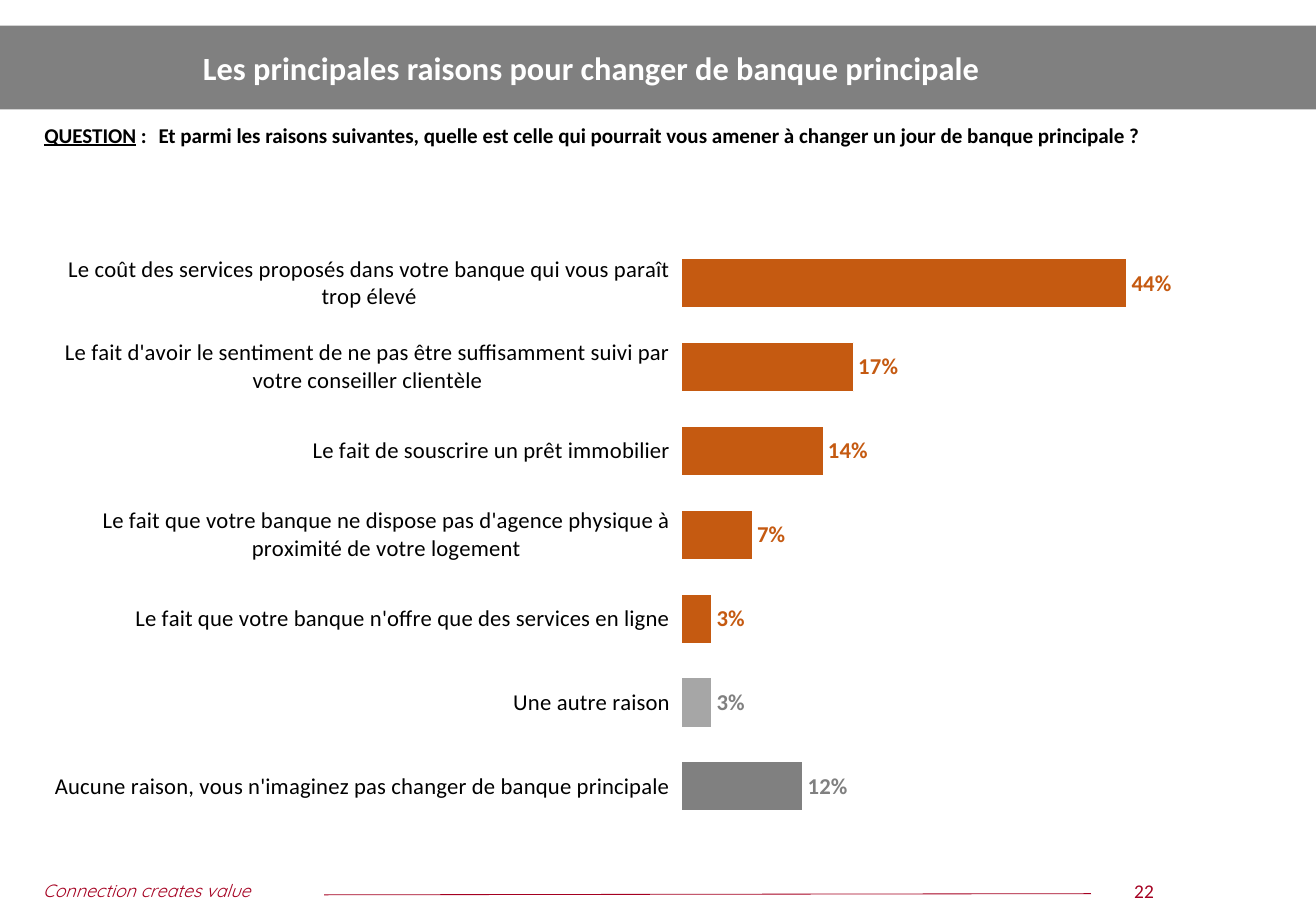
from pptx import Presentation
from pptx.chart.data import CategoryChartData
from pptx.dml.color import RGBColor
from pptx.enum.chart import XL_CHART_TYPE, XL_LABEL_POSITION, XL_TICK_LABEL_POSITION, XL_TICK_MARK
from pptx.enum.shapes import MSO_CONNECTOR, MSO_SHAPE
from pptx.enum.text import MSO_ANCHOR, PP_ALIGN
from pptx.oxml import parse_xml
from pptx.oxml.ns import nsdecls, qn
from pptx.util import Inches, Pt

COLORS = {
    "band": "808080",
    "white": "FFFFFF",
    "black": "000000",
    "accent": "A50021",
    "orange": "C55A11",
    "light_grey": "A6A6A6",
    "grey": "808080",
}

# Reason, share, bar colour, label colour
REASONS = [
    ("Le coût des services proposés dans votre banque qui vous paraît trop élevé", 0.44, "orange", "orange"),
    ("Le fait d'avoir le sentiment de ne pas être suffisamment suivi par votre conseiller clientèle",
     0.17, "orange", "orange"),
    ("Le fait de souscrire un prêt immobilier", 0.14, "orange", "orange"),
    ("Le fait que votre banque ne dispose pas d'agence physique à proximité de votre logement",
     0.07, "orange", "orange"),
    ("Le fait que votre banque n'offre que des services en ligne", 0.03, "orange", "orange"),
    ("Une autre raison", 0.03, "light_grey", "grey"),
    ("Aucune raison, vous n'imaginez pas changer de banque principale", 0.12, "grey", "grey"),
]


def color(name):
    return RGBColor.from_string(COLORS[name])


def set_font(font, size, color_name, name="Calibri", bold=False, italic=False):
    font.name = name
    font.size = Pt(size)
    font.bold = bold
    font.italic = italic
    font.color.rgb = color(color_name)


def add_text(slide, left, top, width, height):
    frame = slide.shapes.add_textbox(Inches(left), Inches(top), Inches(width), Inches(height)).text_frame
    frame.word_wrap = True
    return frame


def add_header(slide, left, top, width, height):
    # Grey band, placed behind the title
    band = slide.shapes.add_shape(
        MSO_SHAPE.RECTANGLE, Inches(left), Inches(top), Inches(width), Inches(height))
    band.shadow.inherit = False
    band.fill.solid()
    band.fill.fore_color.rgb = color("band")
    band.line.fill.background()
    title = slide.shapes.title
    title.element.addprevious(band.element)

    # Title
    title.left, title.top = Inches(left + 1.64), Inches(top)
    title.width, title.height = Inches(width - 1.81), Inches(height)
    frame = title.text_frame
    frame.text = "Les principales raisons pour changer de banque principale"
    frame.vertical_anchor = MSO_ANCHOR.MIDDLE
    paragraph = frame.paragraphs[0]
    paragraph.alignment = PP_ALIGN.JUSTIFY
    set_font(paragraph.font, 20, "white", bold=True)


def add_question(slide, left, top, width, height):
    frame = add_text(slide, left, top, width, height)
    frame.margin_left, frame.margin_right = Inches(0.09), Inches(0.36)
    frame.margin_top = frame.margin_bottom = Inches(0.12)
    paragraph = frame.paragraphs[0]
    paragraph.alignment = PP_ALIGN.JUSTIFY
    properties = paragraph._p.get_or_add_pPr()
    properties.set("marL", str(Inches(0.98)))
    properties.set("indent", str(-Inches(0.98)))
    set_font(paragraph.font, 13, "black", bold=True)
    keyword = paragraph.add_run()
    keyword.text = "QUESTION"
    keyword.font.underline = True
    question = paragraph.add_run()
    question.text = (" :\tEt parmi les raisons suivantes, quelle est celle qui pourrait "
                     "vous amener à changer un jour de banque principale ?")


def set_plot_layout(chart, x, y, width, height):
    plot_area = chart._chartSpace.chart.plotArea
    for layout in plot_area.findall(qn("c:layout")):
        plot_area.remove(layout)
    plot_area.insert(0, parse_xml(
        f'<c:layout {nsdecls("c")}><c:manualLayout><c:layoutTarget val="inner"/>'
        '<c:xMode val="edge"/><c:yMode val="edge"/>'
        f'<c:x val="{x}"/><c:y val="{y}"/><c:w val="{width}"/><c:h val="{height}"/>'
        '</c:manualLayout></c:layout>'))


def add_reasons_chart(slide, left, top, width, height):
    chart_data = CategoryChartData(number_format="0%")
    chart_data.categories = [reason[0] for reason in REASONS]
    chart_data.add_series("Series 1", [reason[1] for reason in REASONS])
    chart = slide.shapes.add_chart(
        XL_CHART_TYPE.BAR_CLUSTERED, Inches(left), Inches(top),
        Inches(width), Inches(height), chart_data).chart
    chart.has_legend = False
    chart.has_title = False
    set_font(chart.font, 18, "black")
    set_plot_layout(chart, 0.52, 0, 0.42, 1)

    # Axes
    categories = chart.category_axis
    categories.reverse_order = True
    categories.major_tick_mark = XL_TICK_MARK.OUTSIDE
    categories.tick_label_position = XL_TICK_LABEL_POSITION.LOW
    categories.format.line.fill.background()
    set_font(categories.tick_labels.font, 14, "black")
    values = chart.value_axis
    values.minimum_scale, values.maximum_scale = 0, 0.5
    values.has_major_gridlines = False
    values.visible = False

    # Bars and their labels
    plot = chart.plots[0]
    plot.gap_width = 70
    plot.vary_by_categories = False
    series = plot.series[0]
    series.format.fill.solid()
    series.format.fill.fore_color.rgb = color("orange")
    for index, (_, _, bar_color, label_color) in enumerate(REASONS):
        point = series.points[index]
        point.format.fill.solid()
        point.format.fill.fore_color.rgb = color(bar_color)
        point.format.line.color.rgb = color("white")
        point.format.line.width = Pt(0.75)
        set_font(point.data_label.font, 14, label_color, bold=True)
        point.data_label.position = XL_LABEL_POSITION.OUTSIDE_END


def add_footer(slide, left, top, width, height):
    # Slogan
    slogan = add_text(slide, left, top, 2.98, height).paragraphs[0]
    slogan.text = "Connection creates value"
    set_font(slogan.font, 11, "accent", name="Quicksand", italic=True)

    # Rule
    rule = slide.shapes.add_connector(
        MSO_CONNECTOR.STRAIGHT, Inches(left + 2.51), Inches(top + 0.18),
        Inches(left + 9.09), Inches(top + 0.17))
    rule.line.color.rgb = color("accent")
    rule.line.width = Pt(0.5)
    rule._element.spPr.append(parse_xml(f'<a:effectLst {nsdecls("a")}/>'))

    # Page number
    number = add_text(slide, left + width - 0.59, top, 0.59, height).paragraphs[0]
    number.text = "22"
    number.alignment = PP_ALIGN.CENTER
    set_font(number.font, 12, "accent")


def main():
    presentation = Presentation()
    presentation.slide_width, presentation.slide_height = Inches(11.29), Inches(7.87)
    slide = presentation.slides.add_slide(presentation.slide_layouts[5])
    add_header(slide, 0, 0.22, 11.29, 0.72)
    add_footer(slide, 0.27, 7.5, 9.84, 0.3)
    add_reasons_chart(slide, 0.47, 2.07, 10.34, 5.04)
    add_question(slide, 0.29, 0.94, 11, 0.58)
    presentation.save("out.pptx")


if __name__ == "__main__":
    main()
